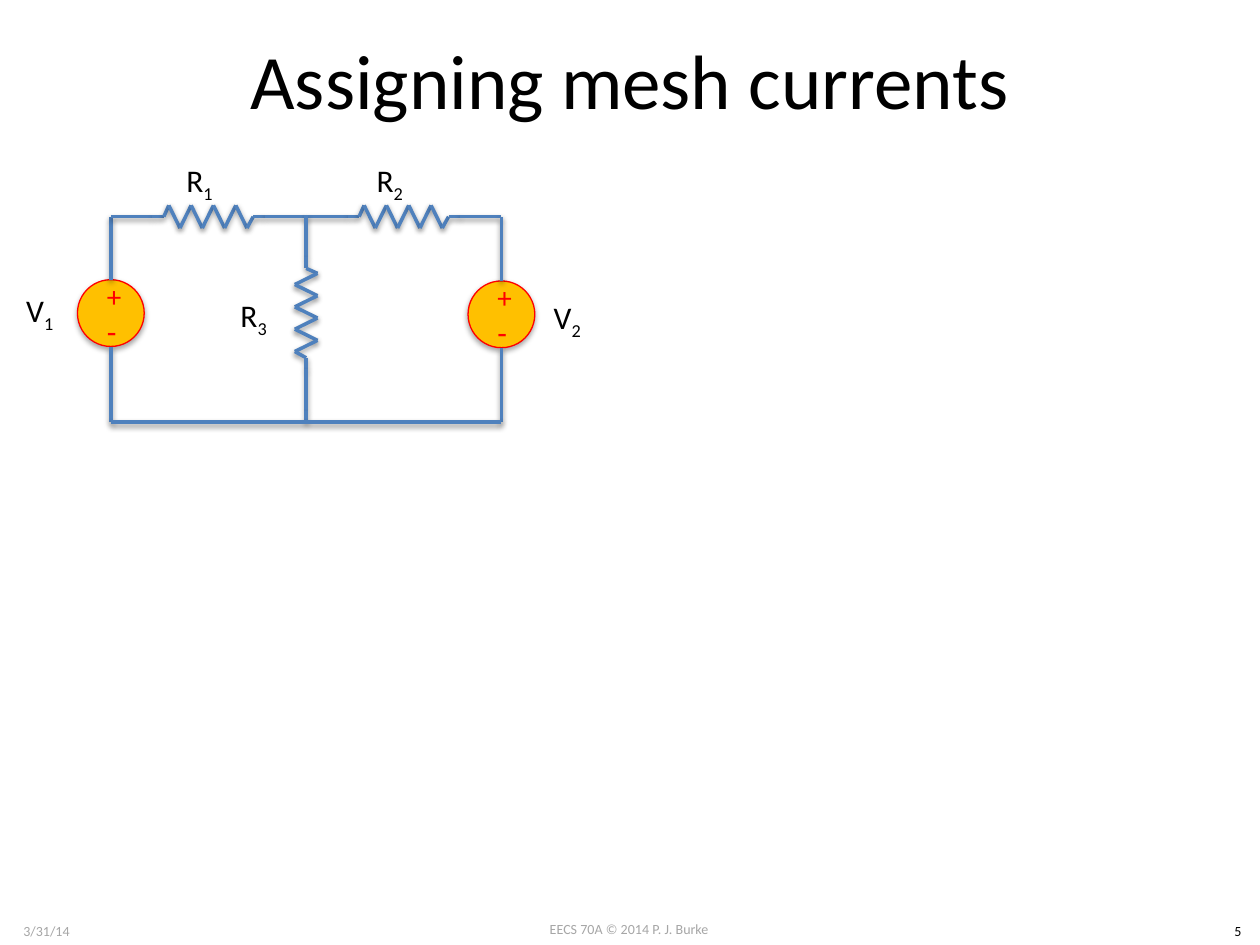
from dataclasses import dataclass
from itertools import pairwise

from lxml.etree import SubElement
from pptx import Presentation
from pptx.dml.color import RGBColor as RGB
from pptx.enum.shapes import MSO_CONNECTOR as CONN, MSO_SHAPE as SHAPE
from pptx.enum.text import MSO_ANCHOR as ANCHOR, MSO_AUTO_SIZE as AUTO, PP_ALIGN as ALIGN
from pptx.oxml.ns import qn
from pptx.util import Inches, Pt


@dataclass(frozen=True)
class Theme:
    font: str = "Calibri"
    ink: RGB = RGB(0x00, 0x00, 0x00)
    muted: RGB = RGB(0xA6, 0xA6, 0xA6)
    wire: RGB = RGB(0x4F, 0x81, 0xBD)
    source: RGB = RGB(0xFF, 0xC0, 0x00)
    polarity: RGB = RGB(0xFF, 0x00, 0x00)
    title_pt: float = 44
    label_pt: float = 18
    plus_pt: float = 16.6
    footer_pt: float = 8
    wire_pt: float = 2
    outline_pt: float = 0.75


THEME = Theme()

# Circuit geometry in inches
LEFT, MIDDLE, RIGHT = 0.88, 2.43, 3.98
TOP, BOTTOM = 1.72, 3.35
DIAMETER = 0.53
RESISTOR_LENGTH = 1.55
ZIGZAG_START, ZIGZAG_SPAN, ZIGZAG_PEAKS = 0.46, 0.62, 8
ZIGZAG_HEIGHT = 0.09


def add_shadow(effects, opacity, distance):
    """Soft shadow straight below, inside an effect list."""
    shadow = SubElement(effects, qn("a:outerShdw"), blurRad=str(Pt(3.1)),
                        dist=str(Pt(distance)), dir="5400000", rotWithShape="0")
    color = SubElement(shadow, qn("a:srgbClr"), val="000000")
    SubElement(color, qn("a:alpha"), val=str(opacity * 1000))


def add_text(shapes, box, text, size, color, align=ALIGN.CENTER,
             anchor=ANCHOR.TOP, wrap=True, grow=False, subscript=""):
    sp = shapes.add_textbox(*map(Inches, box))
    tf = sp.text_frame
    tf.word_wrap = wrap
    tf.vertical_anchor = anchor
    tf.auto_size = AUTO.SHAPE_TO_FIT_TEXT if grow else AUTO.NONE
    p = tf.paragraphs[0]
    p.alignment = align
    p.font.name, p.font.size = THEME.font, Pt(size)
    p.font.color.rgb = color
    p.add_run().text = text
    if subscript:
        r = p.add_run()
        r.text = subscript
        r.font._element.set("baseline", "-25000")


def add_label(shapes, x, y, width, letter, index):
    add_text(shapes, (x, y, width, 0.4), letter, THEME.label_pt, THEME.ink,
             align=ALIGN.LEFT, wrap=False, grow=True, subscript=index)


def add_wire(shapes, start, end):
    line = shapes.add_connector(CONN.STRAIGHT, *map(Inches, (*start, *end)))
    line.line.color.rgb = THEME.wire
    line.line.width = Pt(THEME.wire_pt)
    effects = SubElement(line._element.spPr, qn("a:effectLst"))
    add_shadow(effects, 38, 1.6)


def add_resistor(slide, x, y, vertical=False, tail=0):
    """Zigzag with leads on both sides, running right or down from (x, y)."""
    pitch = ZIGZAG_SPAN / (ZIGZAG_PEAKS - 1)
    peaks = [(ZIGZAG_START + i * pitch, ZIGZAG_HEIGHT * (-1) ** i)
             for i in range(ZIGZAG_PEAKS)]
    steps = [(0, 0), (0.33, 0), (0.42, 0), *peaks,
             (1.13, 0), (1.22, 0), (RESISTOR_LENGTH, 0)]
    if tail:
        steps.append((RESISTOR_LENGTH + tail, 0))
    points = [(x + off, y + along) if vertical else (x + along, y - off)
              for along, off in steps]
    shapes = slide.shapes.add_group_shape().shapes
    for start, end in pairwise(points):
        add_wire(shapes, start, end)


def add_source(slide, x, y):
    """Voltage source centred on x with its circle starting at y."""
    shapes = slide.shapes.add_group_shape().shapes
    sp = shapes.add_shape(SHAPE.OVAL, Inches(x - DIAMETER / 2), Inches(y),
                          Inches(DIAMETER), Inches(DIAMETER))
    sp.fill.solid()
    sp.fill.fore_color.rgb = THEME.source
    sp.line.color.rgb = THEME.polarity
    sp.line.width = Pt(THEME.outline_pt)
    sp.shadow.inherit = False
    add_shadow(sp._element.spPr.find(qn("a:effectLst")), 35, 1.8)
    for sign, offset, size in (("+", -0.04, THEME.plus_pt),
                               ("-", 0.24, THEME.label_pt)):
        add_text(shapes, (x - 0.13, y + offset, 0.26, 0.33), sign, size,
                 THEME.polarity, anchor=ANCHOR.MIDDLE)
    add_wire(shapes, (x, BOTTOM), (x, y + DIAMETER))
    add_wire(shapes, (x, y), (x, TOP))


def add_footer(slide):
    for box, text, color in (
        ((3.83, 7.26, 2.33, 0.24), "EECS 70A © 2014 P. J. Burke", THEME.muted),
        ((0, 7.27, 0.74, 0.24), "3/31/14", THEME.muted),
        ((9.65, 7.27, 0.35, 0.24), "5", THEME.ink),
    ):
        add_text(slide.shapes, box, text, THEME.footer_pt, color, grow=True)


def main():
    prs = Presentation()
    prs.slide_width, prs.slide_height = Inches(10), Inches(7.5)
    slide = prs.slides.add_slide(prs.slide_layouts[6])

    # Footer and title
    add_footer(slide)
    add_text(slide.shapes, (0.5, 0, 9, 1.25), "Assigning mesh currents",
             THEME.title_pt, THEME.ink, anchor=ANCHOR.MIDDLE)

    # Circuit: two sources, three resistors and the common return wire
    add_source(slide, LEFT, 2.22)
    add_resistor(slide, LEFT, TOP)
    add_resistor(slide, MIDDLE, TOP)
    add_resistor(slide, MIDDLE, TOP - 0.01, vertical=True, tail=0.09)
    add_source(slide, RIGHT, 2.23)
    add_wire(slide.shapes, (LEFT, BOTTOM), (RIGHT, BOTTOM))

    # Component labels
    for x, y, width, letter, index in (
        (1.38, 1.23, 0.42, "R", "1"),
        (2.89, 1.23, 0.42, "R", "2"),
        (1.81, 2.3, 0.42, "R", "3"),
        (0.11, 2.26, 0.43, "V", "1"),
        (4.24, 2.32, 0.49, " V", "2"),
    ):
        add_label(slide.shapes, x, y, width, letter, index)

    prs.save("out.pptx")


if __name__ == "__main__":
    main()
